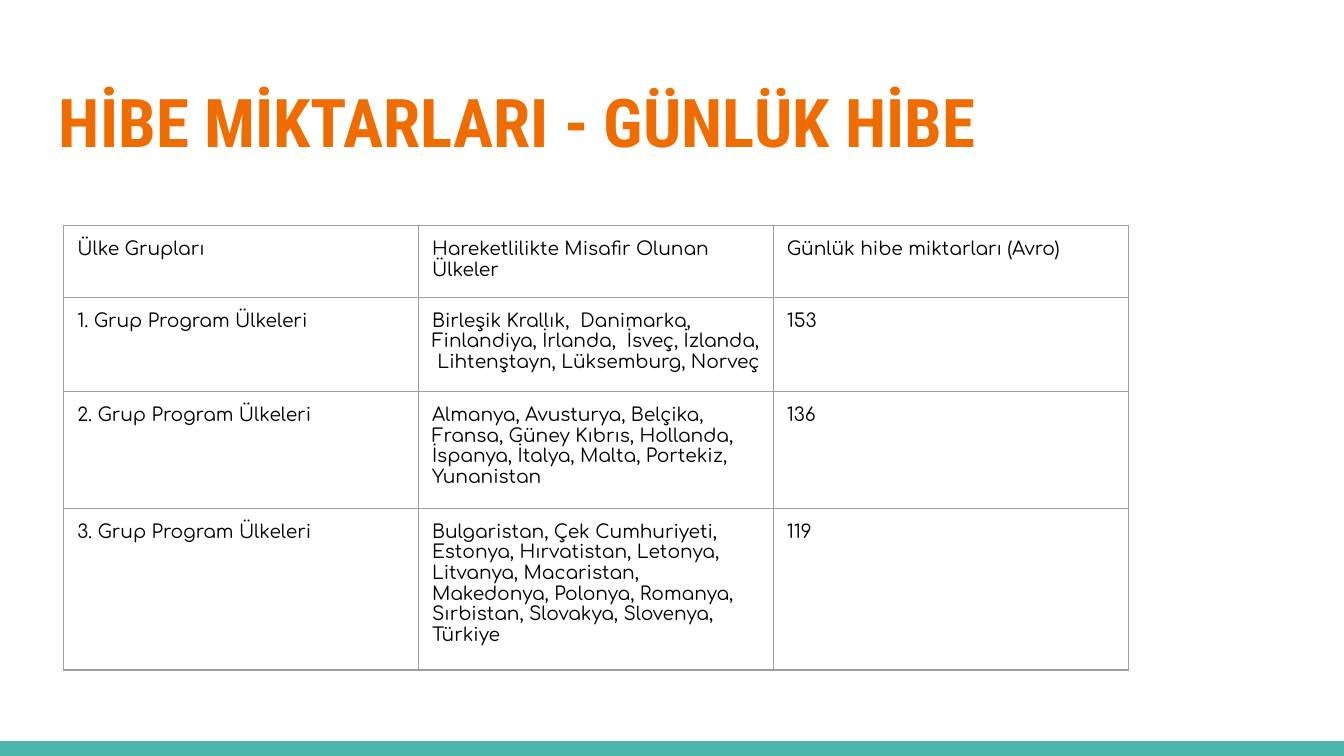
from lxml.etree import SubElement
from pptx import Presentation
from pptx.dml.color import RGBColor
from pptx.enum.shapes import MSO_SHAPE
from pptx.enum.text import MSO_ANCHOR
from pptx.oxml.ns import qn
from pptx.util import Inches, Pt

WIDE = Inches(10)
HIGH = WIDE * 9 // 16
PAD = Inches(0.1)
COL, ROW = Inches(2.64), Inches(0.42)
FRAME = Inches(3.28)

TEAL = RGBColor(0x4D, 0xB6, 0xAC)
ORANGE = RGBColor(0xEF, 0x6C, 0x00)
BLACK = RGBColor(0x00, 0x00, 0x00)
GRAY = RGBColor(0x9E, 0x9E, 0x9E)

HEAD = {"name": "Roboto Condensed", "size": Pt(36), "bold": True}
BODY = {"name": "Comfortaa", "size": Pt(10), "bold": False}
INSET = {"margin_left": PAD, "margin_right": PAD,
         "margin_top": PAD, "margin_bottom": PAD}

GRANTS = [
    ("Ülke Grupları", "Hareketlilikte Misafir Olunan Ülkeler",
     "Günlük hibe miktarları (Avro)"),
    ("1. Grup Program Ülkeleri",
     "Birleşik Krallık,  Danimarka, Finlandiya, İrlanda,  İsveç, İzlanda,  "
     "Lihtenştayn, Lüksemburg, Norveç", "153"),
    ("2. Grup Program Ülkeleri",
     "Almanya, Avusturya, Belçika, Fransa, Güney Kıbrıs, Hollanda, İspanya, "
     "İtalya, Malta, Portekiz, Yunanistan", "136"),
    ("3. Grup Program Ülkeleri",
     "Bulgaristan, Çek Cumhuriyeti, Estonya, Hırvatistan, Letonya, Litvanya, "
     "Macaristan, Makedonya, Polonya, Romanya, Sırbistan, Slovakya, "
     "Slovenya, Türkiye", "119"),
]


def apply(item, form):
    for key, value in form.items():
        setattr(item, key, value)


def write(frame, text, form, color):
    para = frame.paragraphs[0]
    run = para.add_run()
    run.text = text
    apply(run.font, form)
    run.font.color.rgb = color


def add_bar(slide):
    tall = Inches(0.11)
    bar = slide.shapes.add_shape(MSO_SHAPE.RECTANGLE, 0, HIGH - tall, WIDE, tall)
    bar.shadow.inherit = False
    bar.fill.solid()
    bar.fill.fore_color.rgb = TEAL
    bar.line.fill.background()


def add_title(slide, text):
    side = Pt(24.55)
    box = slide.shapes.add_textbox(side, Pt(35.6), WIDE - 2 * side, Inches(0.77))
    apply(box.text_frame, {**INSET, "word_wrap": True,
                           "vertical_anchor": MSO_ANCHOR.TOP})
    write(box.text_frame, text, HEAD, ORANGE)


def add_edges(cell):
    props = cell._tc.get_or_add_tcPr()
    for spot, side in enumerate(("a:lnL", "a:lnR", "a:lnT", "a:lnB")):
        line = props.makeelement(qn(side), {"w": str(Pt(0.75))})
        props.insert(spot, line)
        fill = SubElement(line, qn("a:solidFill"))
        SubElement(fill, qn("a:srgbClr"), val=str(GRAY))


def add_grid(slide, data):
    rows, cols = len(data), len(data[0])
    holder = slide.shapes.add_table(rows, cols, Pt(34.2), Inches(1.68),
                                    cols * COL, rows * ROW)
    grid = holder.table
    apply(grid, {"first_row": False, "horz_banding": False})
    for col in grid.columns:
        col.width = COL
    for row, texts in zip(grid.rows, data):
        row.height = ROW
        for cell, text in zip(row.cells, texts):
            apply(cell, INSET)
            cell.fill.background()
            add_edges(cell)
            write(cell.text_frame, text, BODY, BLACK)
    # Row and column changes reset the frame, so size it last
    apply(holder, {"width": FRAME, "height": FRAME})


def main():
    deck = Presentation()
    apply(deck, {"slide_width": WIDE, "slide_height": HIGH})
    slide = deck.slides.add_slide(deck.slide_layouts[6])
    # Footer band
    add_bar(slide)
    # Heading
    add_title(slide, "HİBE MİKTARLARI - GÜNLÜK HİBE")
    # Daily grants by country group
    add_grid(slide, GRANTS)
    deck.save("out.pptx")


if __name__ == "__main__":
    main()
